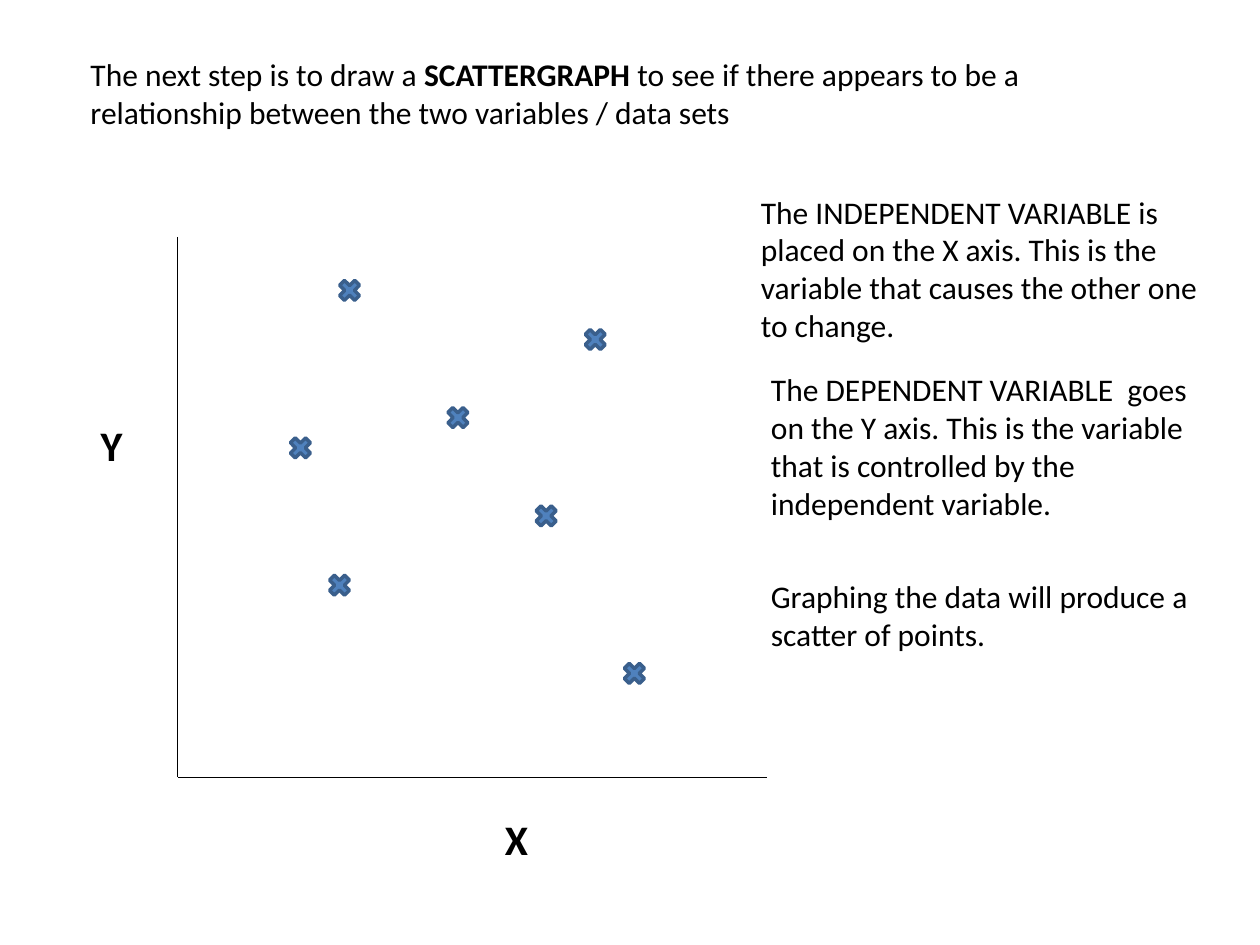
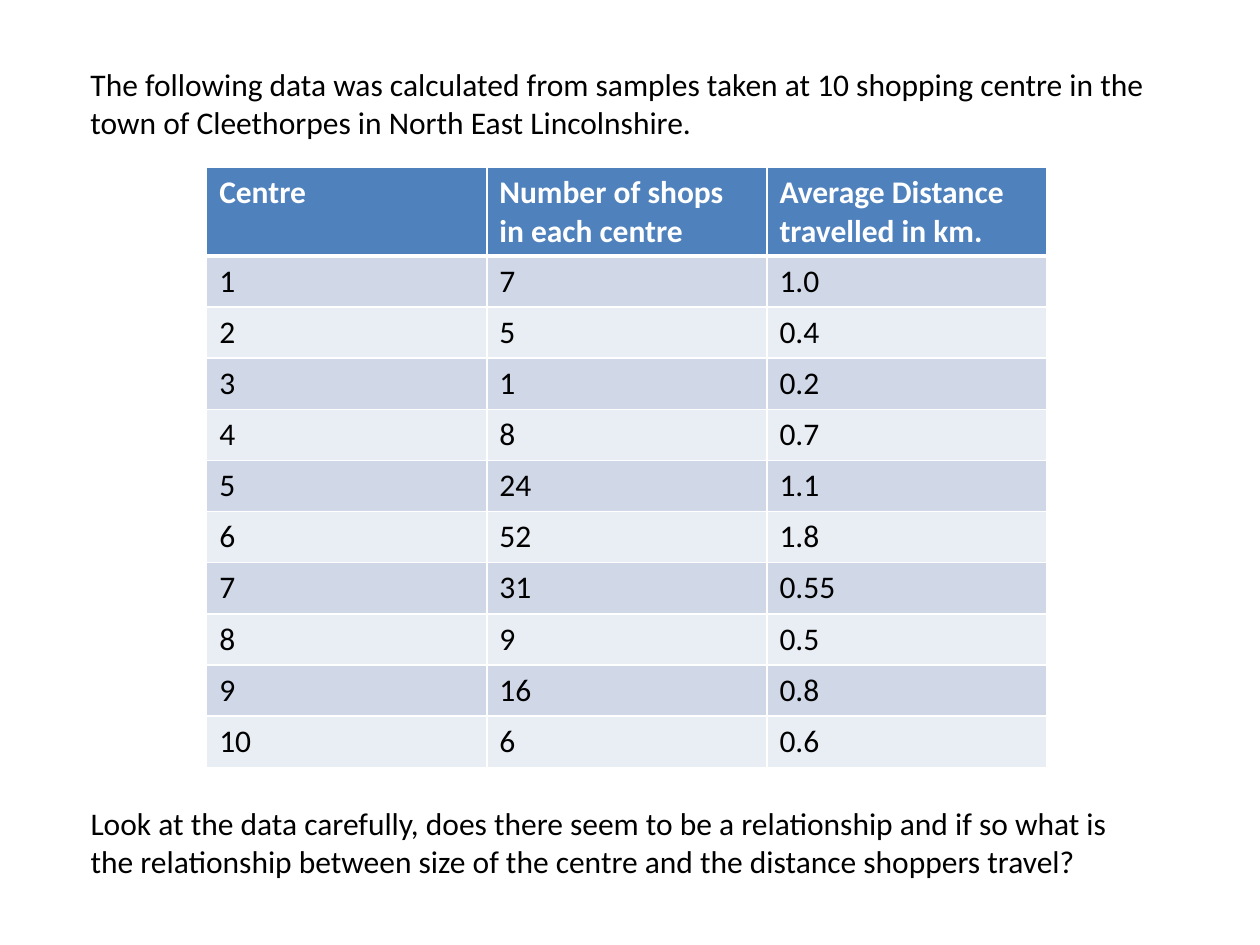
from dataclasses import dataclass

from lxml import etree
from pptx import Presentation
from pptx.dml.color import RGBColor
from pptx.enum.shapes import MSO_CONNECTOR, MSO_SHAPE
from pptx.enum.text import MSO_AUTO_SIZE
from pptx.oxml.ns import qn
from pptx.util import Inches, Pt

STRAIGHT = MSO_CONNECTOR.STRAIGHT
CROSS = MSO_SHAPE.MATH_MULTIPLY
GROW = MSO_AUTO_SIZE.SHAPE_TO_FIT_TEXT


@dataclass(frozen=True)
class Theme:
    font: str = "Calibri"
    body: int = 18
    axis_label: int = 24
    ink: str = "000000"
    white: str = "FFFFFF"
    accent: str = "4F81BD"
    accent_edge: str = "3A5F8C"
    bands: tuple = ("D0D8E8", "E9EDF4")


theme = Theme()


def add_run(paragraph, text, size=theme.body, bold=False, color=theme.ink):
    run = paragraph.add_run()
    run.text = text
    run.font.name = theme.font
    run.font.size = Pt(size)
    run.font.bold = bold
    run.font.color.rgb = RGBColor.from_string(color)


def add_text(slide, left, top, width, height, runs, size=theme.body):
    box = slide.shapes.add_textbox(Inches(left), Inches(top), Inches(width), Inches(height))
    frame = box.text_frame
    frame.word_wrap = True
    frame.auto_size = GROW
    for text, bold in runs:
        add_run(frame.paragraphs[0], text, size, bold)


prs = Presentation()
prs.slide_width = Inches(10)
prs.slide_height = Inches(7.5)
blank_layout = prs.slide_layouts[6]
margin = 0.62
two_lines = 0.71
four_lines = 1.31

scatter_slide = prs.slides.add_slide(blank_layout)
add_text(scatter_slide, margin, 0.39, 8.67, two_lines, [
    ("The next step is to draw a ", False),
    ("SCATTERGRAPH", True),
    (" to see if there appears to be a relationship between the two variables / data sets", False),
])

origin = (1.41, 6.17)
for axis_start, axis_end in [((1.41, 1.88), origin), (origin, (6.09, 6.17))]:
    axis = scatter_slide.shapes.add_connector(
        STRAIGHT, *(Inches(value) for value in axis_start + axis_end))
    axis.line.color.rgb = RGBColor.from_string(theme.ink)
    axis.line.width = Pt(0.75)
    etree.SubElement(axis._element.spPr, qn("a:effectLst"))

explanations = [
    (5.94, 1.48, 3.67, four_lines,
     "The INDEPENDENT VARIABLE is placed on the X axis. "
     "This is the variable that causes the other one to change."),
    (6.02, 2.89, 3.52, four_lines,
     "The DEPENDENT VARIABLE  goes on the Y axis. "
     "This is the variable that is controlled by the independent variable."),
    (6.02, 4.53, 3.67, two_lines, "Graphing the data will produce a scatter of points."),
]
for left, top, width, height, explanation in explanations:
    add_text(scatter_slide, left, top, width, height, [(explanation, False)])

for left, top, width, axis_name in [(0.7, 3.28, 0.39, "Y"), (3.91, 6.41, 0.7, "X")]:
    add_text(scatter_slide, left, top, width, 0.5, [(axis_name, True)], theme.axis_label)

point_size = Inches(0.23)
points = [(2.66, 2.19), (4.22, 3.98), (2.58, 4.53), (4.92, 5.23),
          (4.61, 2.58), (2.27, 3.44), (3.52, 3.2)]
for left, top in points:
    point = scatter_slide.shapes.add_shape(
        CROSS, Inches(left), Inches(top), point_size, point_size)
    point.shadow.inherit = False
    point.fill.solid()
    point.fill.fore_color.rgb = RGBColor.from_string(theme.accent)
    point.line.color.rgb = RGBColor.from_string(theme.accent_edge)
    point.line.width = Pt(2)

data_slide = prs.slides.add_slide(blank_layout)
add_text(data_slide, margin, 0.47, 8.67, two_lines, [
    ("The following data was calculated from samples taken at 10 shopping centre "
     "in the town of Cleethorpes in North East Lincolnshire.", False),
])

headings = ("Centre", "Number of shops in each centre", "Average Distance travelled in km.")
shop_counts = [7, 5, 1, 8, 24, 52, 31, 9, 16, 6]
distances = ["1.0", "0.4", "0.2", "0.7", "1.1", "1.8", "0.55", "0.5", "0.8", "0.6"]
centres = range(1, len(shop_counts) + 1)
records = [headings, *zip(centres, shop_counts, distances)]
header_height = 0.7
row_height = 0.406

centre_table = data_slide.shapes.add_table(
    len(records), len(headings), Inches(1.64), Inches(1.33), Inches(6.67),
    Inches(header_height + row_height * len(shop_counts))).table
for row_index, record in enumerate(records):
    is_header = row_index == 0
    centre_table.rows[row_index].height = Inches(header_height if is_header else row_height)
    fill = theme.accent if is_header else theme.bands[(row_index - 1) % 2]
    color = theme.white if is_header else theme.ink
    for column_index, value in enumerate(record):
        cell = centre_table.cell(row_index, column_index)
        add_run(cell.text_frame.paragraphs[0], str(value), bold=is_header, color=color)
        properties = cell._tc.get_or_add_tcPr()
        for side in ("L", "R", "T", "B"):
            thick = (is_header and side == "B") or (row_index == 1 and side == "T")
            border = etree.SubElement(properties, qn(f"a:ln{side}"), w=str(Pt(3 if thick else 1)))
            border_fill = etree.SubElement(border, qn("a:solidFill"))
            etree.SubElement(border_fill, qn("a:srgbClr"), val=theme.white)
        cell.fill.solid()
        cell.fill.fore_color.rgb = RGBColor.from_string(fill)

add_text(data_slide, margin, 6.33, 8.28, two_lines, [
    ("Look at the data carefully, does there seem to be a relationship and if so what is "
     "the relationship between size of the centre and the distance shoppers travel?", False),
])

prs.save("out.pptx")
